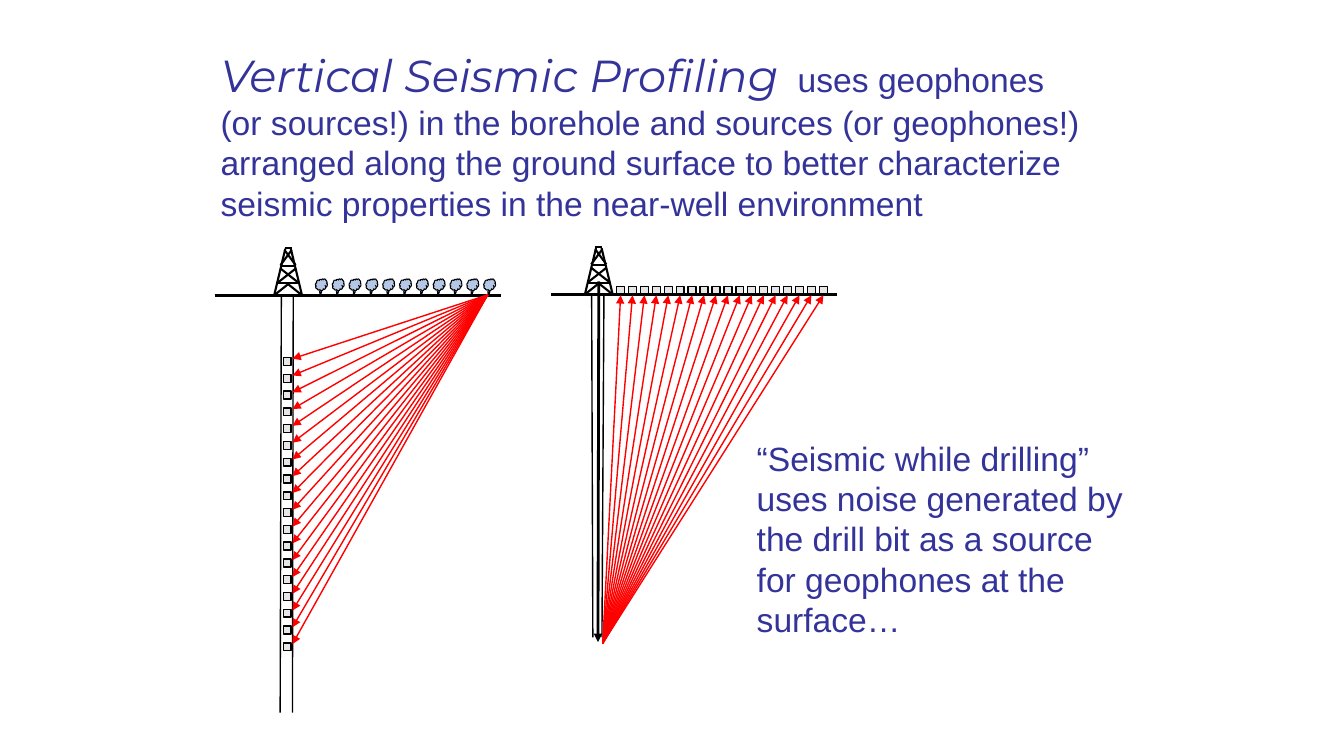
from dataclasses import dataclass

from lxml import etree
from pptx import Presentation
from pptx.dml.color import RGBColor
from pptx.enum.shapes import MSO_CONNECTOR as Link, MSO_SHAPE as Preset
from pptx.enum.text import MSO_AUTO_SIZE as AutoSize
from pptx.oxml.ns import qn
from pptx.util import Cm, Pt


@dataclass(frozen=True)
class Theme:
    ink: str = "333399"
    black: str = "000000"
    ray: str = "FF0000"
    geophone: str = "E7E6E6"
    bush: str = "B4C7E7"
    font: str = "Arial"
    title_font: str = "Montserrat"
    title_size: float = 32
    body_size: float = 24
    thin: float = 0.75
    fine: float = 1
    medium: float = 1.5
    heavy: float = 2


THEME = Theme()
GEOPHONE_SIZE = 0.2
BUSH_SIZE = 0.3
GEOPHONE_COUNT = 18
BUSH_COUNT = 11

# Derrick parts as offsets in cm from the middle of its base
MIRRORED_STRUTS = [
    ((-0.35, 0), (-0.07, -1.17)),
    ((-0.35, 0), (0, -0.28)),
    ((0.27, -0.31), (-0.2, -0.68)),
    ((0.19, -0.76), (-0.09, -1.14)),
]
CROSSBARS = [(0.27, -0.3), (0.19, -0.74), (0.09, -1.19)]


def spread(first, last, count):
    """Evenly spaced positions from first to last."""
    return [first + (last - first) * i / (count - 1) for i in range(count)]


def add_line(shapes, start, end, color=THEME.black, width=THEME.fine, arrow=False):
    line = shapes.add_connector(
        Link.STRAIGHT, Cm(start[0]), Cm(start[1]), Cm(end[0]), Cm(end[1]))
    line.line.color.rgb = RGBColor.from_string(color)
    line.line.width = Pt(width)
    if arrow:
        etree.SubElement(line.line._get_or_add_ln(), qn("a:tailEnd"), type="triangle")
    etree.SubElement(line._element.spPr, qn("a:effectLst"))


def add_symbol(shapes, preset, left, top, size, fill, width):
    symbol = shapes.add_shape(preset, Cm(left), Cm(top), Cm(size), Cm(size))
    symbol.shadow.inherit = False
    symbol.fill.solid()
    symbol.fill.fore_color.rgb = RGBColor.from_string(fill)
    symbol.line.color.rgb = RGBColor.from_string(THEME.black)
    symbol.line.width = Pt(width)
    return symbol


def add_geophone(shapes, left, top):
    add_symbol(shapes, Preset.RECTANGLE, left, top, GEOPHONE_SIZE,
               THEME.geophone, THEME.fine)


def add_run(paragraph, words, font=THEME.font, size=THEME.body_size,
            color=THEME.ink, italic=False):
    run = paragraph.add_run()
    run.text = words
    run.font.name = font
    run.font.size = Pt(size)
    run.font.italic = italic
    run.font.color.rgb = RGBColor.from_string(color)


def add_passage(shapes, box, lines):
    """Each line is a list of (words, format) pairs."""
    frame = shapes.add_textbox(*map(Cm, box)).text_frame
    frame.word_wrap = False
    frame.auto_size = AutoSize.SHAPE_TO_FIT_TEXT
    for i, line in enumerate(lines):
        paragraph = frame.add_paragraph() if i else frame.paragraphs[0]
        for words, look in line:
            add_run(paragraph, words, **look)


def draw_derrick(shapes, center, ground):
    derrick = shapes.add_group_shape().shapes

    def strut(start, end):
        add_line(derrick, (center + start[0], ground + start[1]),
                 (center + end[0], ground + end[1]), width=THEME.medium)

    for (x1, y1), (x2, y2) in MIRRORED_STRUTS:
        for side in (1, -1):
            strut((side * x1, y1), (side * x2, y2))
    for half, height in CROSSBARS:
        strut((-half, height), (half, height))


def draw_borehole(shapes, center, ground, depth, walls):
    for top, bottom in walls:
        add_line(shapes, (center + top, ground), (center + bottom, ground + depth))


def draw_borehole_survey(shapes, box):
    """Sources along the surface, geophones down the well."""
    left, ground, width, depth = box
    center = left + 1.85
    draw_derrick(shapes, center, ground)
    draw_borehole(shapes, center, ground, depth, [(-0.17, -0.2), (0.13, 0.11)])

    # Geophones in the borehole
    geophone_tops = spread(ground + 1.57, ground + 8.76, GEOPHONE_COUNT)
    for top in geophone_tops:
        add_geophone(shapes, center - 0.12, top)

    # Ground and surface sources
    add_line(shapes, (left, ground), (left + width, ground), width=THEME.heavy)
    for x in spread(left + 2.54, left + 6.78, BUSH_COUNT):
        bush = add_symbol(shapes, Preset.CLOUD_CALLOUT, x, ground - 0.41,
                          BUSH_SIZE, THEME.bush, THEME.thin)
        bush.adjustments[0] = -0.09
        bush.adjustments[1] = 0.81

    # Rays from the farthest source
    for top in geophone_tops:
        add_line(shapes, (left + 6.88, ground - 0.01), (center + 0.11, top + 0.03),
                 color=THEME.ray, arrow=True)


def draw_drilling_survey(shapes, box):
    """Drill bit as the source, geophones along the surface."""
    left, ground, width, depth = box
    center = left + 1.2
    draw_derrick(shapes, center, ground)
    draw_borehole(shapes, center, ground, depth, [(-0.18, -0.15), (0.13, 0.08)])

    # Geophones and ground
    geophone_lefts = spread(left + 1.65, left + 6.76, GEOPHONE_COUNT)
    for x in geophone_lefts:
        add_geophone(shapes, x, ground - 0.2)
    add_line(shapes, (left, ground), (left + width, ground), width=THEME.heavy)

    # Rays from the bit, then the drill string
    for x in reversed(geophone_lefts):
        add_line(shapes, (center + 0.1, ground + 8.79),
                 (x + GEOPHONE_SIZE / 2, ground + 0.02),
                 color=THEME.ray, arrow=True)
    add_line(shapes, (center, ground - 0.33), (center - 0.02, ground + 8.76),
             width=THEME.heavy, arrow=True)


def draw_introduction(shapes, box):
    title = dict(font=THEME.title_font, size=THEME.title_size, italic=True)
    add_passage(shapes, box, [
        [("Vertical Seismic Profiling", title), ("  uses geophones", {})],
        [("(or sources!) in the borehole and sources (or geophones!)", {})],
        [("arranged along the ground surface to better characterize", {})],
        [("seismic properties in the near-well environment", {})],
    ])


def draw_drilling_note(shapes, box):
    lines = ["“Seismic while drilling”", "uses noise generated by",
             "the drill bit as a source", "for geophones at the", "surface…"]
    add_passage(shapes, box, [[(line, {})] for line in lines])


def main():
    deck = Presentation()
    deck.slide_width, deck.slide_height = Cm(33.87), Cm(19.05)
    shapes = deck.slides.add_slide(deck.slide_layouts[6]).shapes
    draw_introduction(shapes, (5.31, 1.09, 23.11, 4.7))
    draw_borehole_survey(shapes, (5.41, 7.44, 7.21, 10.52))
    draw_drilling_survey(shapes, (13.89, 7.42, 7.2, 8.64))
    draw_drilling_note(shapes, (18.82, 10.9, 9.73, 5.33))
    deck.save("out.pptx")


if __name__ == "__main__":
    main()
